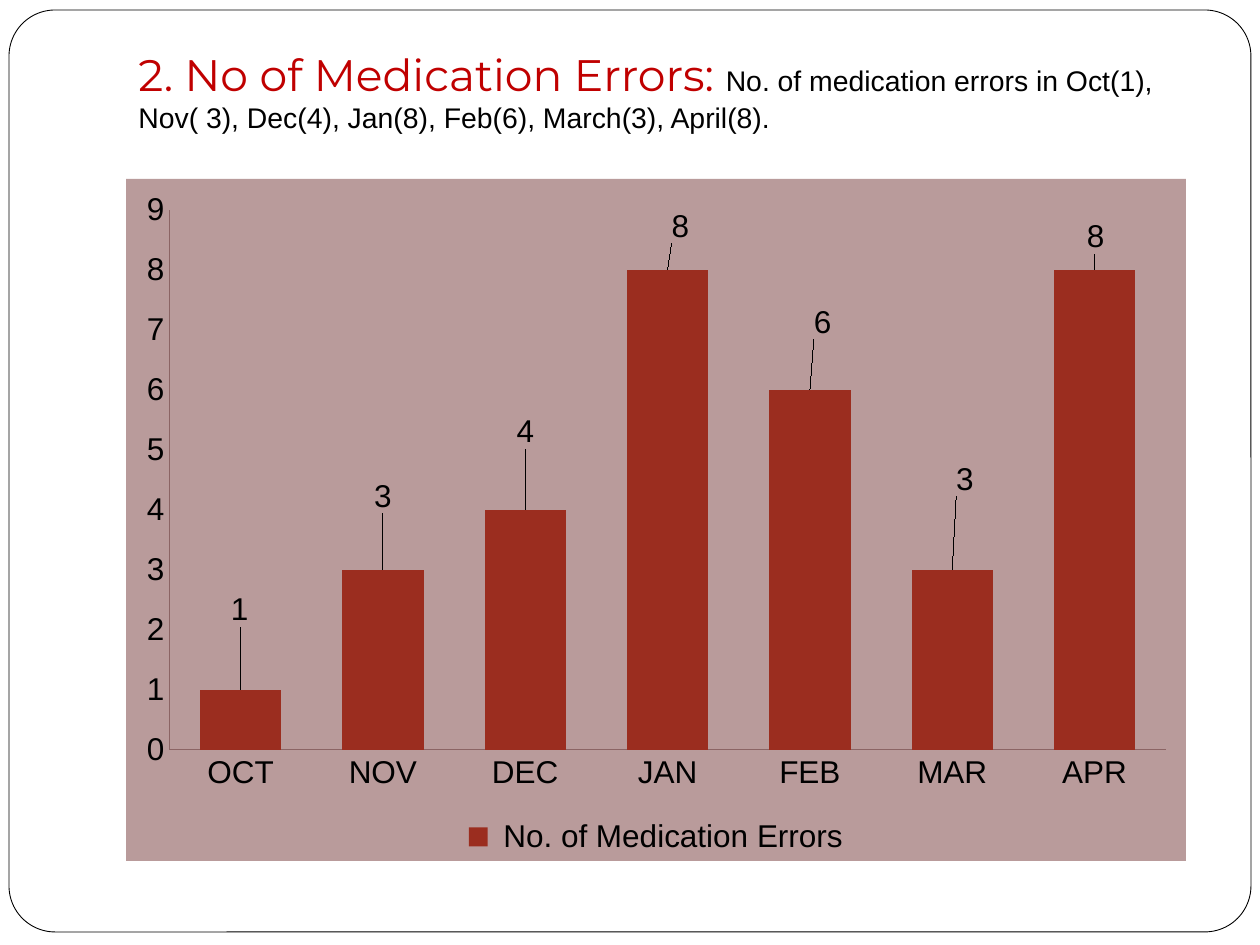
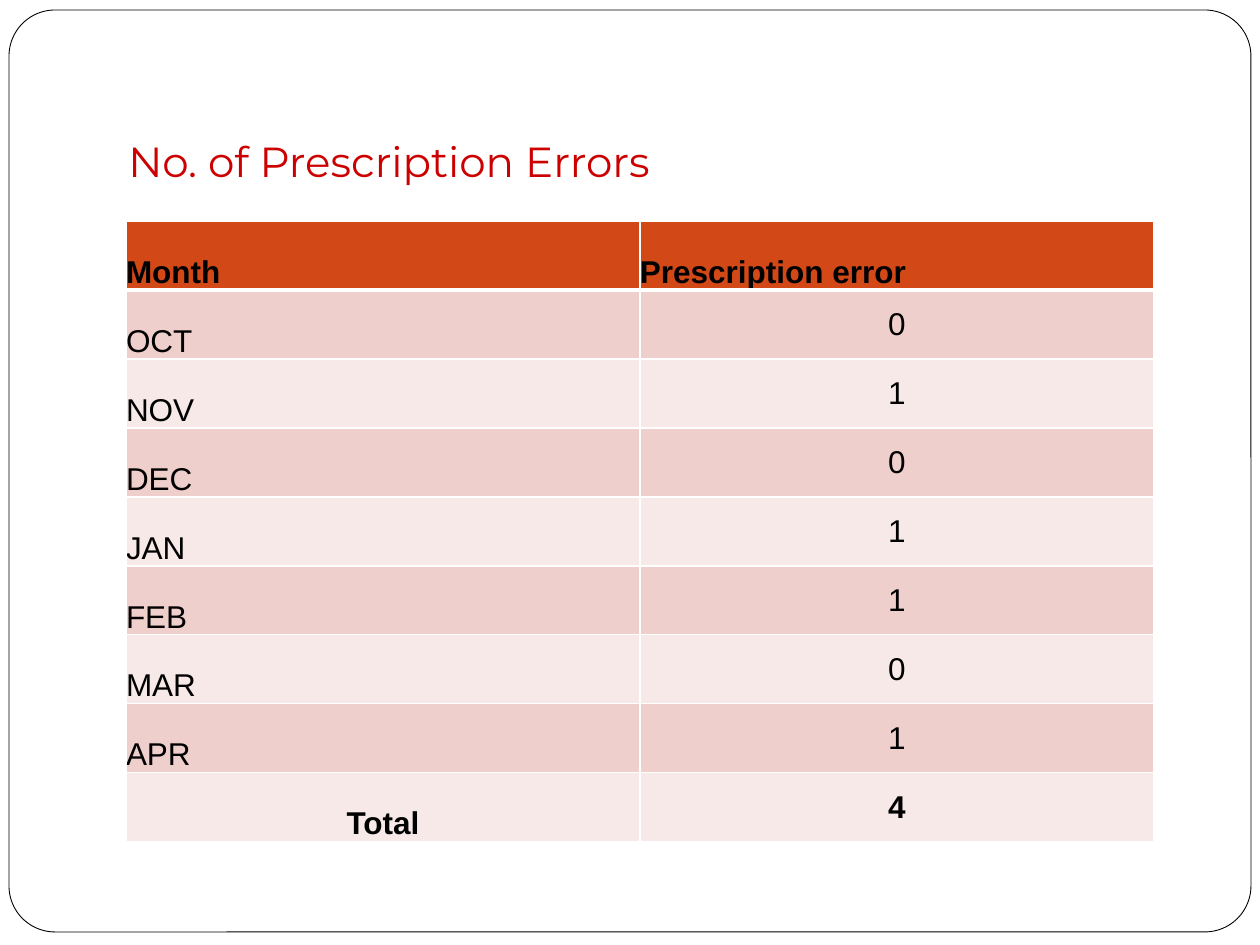
from lxml.etree import Element, SubElement
from pptx import Presentation
from pptx.chart.data import CategoryChartData
from pptx.dml.color import RGBColor
from pptx.enum.chart import XL_CHART_TYPE as ChartType
from pptx.enum.chart import XL_LABEL_POSITION as LabelPosition
from pptx.enum.chart import XL_LEGEND_POSITION as LegendPosition
from pptx.enum.chart import XL_TICK_MARK as TickMark
from pptx.enum.shapes import MSO_SHAPE as Shape
from pptx.enum.text import MSO_ANCHOR as Anchor
from pptx.enum.text import PP_ALIGN as Align
from pptx.oxml.ns import qn
from pptx.util import Emu, Pt

EMU_PER_PX = 914400 / 126
COLORS = {
    "white": "FFFFFF", "black": "000000", "crimson": "C00000", "red": "CC0000",
    "bar": "9B2D1F", "chart": "B99B9B", "axis": "8B6464",
    "header": "D34817", "odd": "EFCFCC", "even": "F7E9E8",
}
BODY_FONT, TITLE_FONT = "Arial", "Montserrat"
MONTHS = ["OCT", "NOV", "DEC", "JAN", "FEB", "MAR", "APR"]
MEDICATION_ERRORS = [1, 3, 4, 8, 6, 3, 8]
PRESCRIPTION_ERRORS = [0, 1, 0, 1, 1, 0, 1]
LABEL_SHIFTS = [(-1, -57), (0, -51), (0, -55), (13, -21), (13, -45), (13, -68), (1, -10)]
CHART_BOX = (126, 179, 1060, 682)
PLOT_BOX = (43, 31, 996, 540)


def px(length):
    """Turn pixels into EMU."""
    return Emu(round(length * EMU_PER_PX))


def color(name):
    """Look up a named colour."""
    return RGBColor.from_string(COLORS[name])


def set_font(font, name, size, tint, bold=False):
    """Set the face, size, colour and weight of a font."""
    font.name, font.size, font.bold = name, Pt(size), bold
    font.color.rgb = color(tint)


def add_solid_fill(parent, tint):
    """Append a solid fill to an XML element."""
    fill = SubElement(parent, qn("a:solidFill"))
    SubElement(fill, qn("a:srgbClr"), val=COLORS[tint])


def add_framed_page(deck):
    """Add a blank slide with the rounded frame."""
    page = deck.slides.add_slide(deck.slide_layouts[6])
    frame = page.shapes.add_shape(Shape.ROUNDED_RECTANGLE, px(9), px(10), px(1242), px(922))
    frame.adjustments[0] = 0.05
    frame.shadow.inherit = False
    frame.fill.solid()
    frame.fill.fore_color.rgb = color("white")
    frame.line.color.rgb = color("black")
    frame.line.width = Pt(0.5)
    return page


def add_title(page, bounds, spans):
    """Add a bottom-anchored title made of (text, font, size, colour) spans."""
    frame = page.shapes.add_textbox(*map(px, bounds)).text_frame
    frame.word_wrap = True
    frame.vertical_anchor = Anchor.BOTTOM
    frame.margin_bottom = px(13)
    para = frame.paragraphs[0]
    for text, *style in spans:
        span = para.add_run()
        span.text = text
        set_font(span.font, *style)


def make_layout(**values):
    """Build a manual chart layout from its settings."""
    layout = Element(qn("c:layout"))
    manual = SubElement(layout, qn("c:manualLayout"))
    for tag, value in values.items():
        SubElement(manual, qn(f"c:{tag}"), val=str(value))
    return layout


def place_plot(chart):
    """Fix the inner plot area within the chart."""
    area = chart._chartSpace.chart.plotArea
    for old in area.findall(qn("c:layout")):
        area.remove(old)
    width, height = CHART_BOX[2:]
    left, top, plot_width, plot_height = PLOT_BOX
    area.insert(0, make_layout(
        layoutTarget="inner", xMode="edge", yMode="edge",
        x=round(left / width, 3), y=round(top / height, 3),
        w=round(plot_width / width, 3), h=round(plot_height / height, 3)))


def fill_chart(chart, tint):
    """Fill the chart background without an outline."""
    properties = Element(qn("c:spPr"))
    add_solid_fill(properties, tint)
    SubElement(SubElement(properties, qn("a:ln")), qn("a:noFill"))
    chart._chartSpace.chart.addnext(properties)


def shift_labels(series):
    """Move each value label away from its bar."""
    width, height = CHART_BOX[2:]
    for index, (right, down) in enumerate(LABEL_SHIFTS):
        label = series.points[index].data_label
        label.position = LabelPosition.OUTSIDE_END
        label._get_or_add_dLbl().insert(
            1, make_layout(x=round(right / width, 3), y=round(down / height, 3)))


def style_axis(axis):
    """Give an axis a thin line without ticks or gridlines."""
    axis.has_major_gridlines = False
    axis.major_tick_mark = axis.minor_tick_mark = TickMark.NONE
    axis.format.line.color.rgb = color("axis")
    axis.format.line.width = Pt(0.75)


def add_column_chart(page, name, values):
    """Add the monthly column chart."""
    chart_data = CategoryChartData()
    chart_data.categories = MONTHS
    chart_data.add_series(name, values)
    chart = page.shapes.add_chart(
        ChartType.COLUMN_CLUSTERED, *map(px, CHART_BOX), chart_data).chart
    set_font(chart.font, BODY_FONT, 18, "black")
    chart.has_title = False
    chart.has_legend = True
    chart.legend.position = LegendPosition.BOTTOM
    chart.legend.include_in_layout = False
    for axis in (chart.category_axis, chart.value_axis):
        style_axis(axis)
    chart.value_axis.minimum_scale, chart.value_axis.maximum_scale = 0, 9
    chart.value_axis.major_unit = 1
    plot = chart.plots[0]
    plot.gap_width = 75
    plot.vary_by_categories = False
    series = plot.series[0]
    series.format.fill.solid()
    series.format.fill.fore_color.rgb = color("bar")
    series.data_labels.show_value = True
    shift_labels(series)
    place_plot(chart)
    fill_chart(chart, "chart")


def style_cell(cell, fill, anchor, align, bold, top, bottom):
    """Set the borders, fill, margins and text of a cell."""
    properties = cell._tc.get_or_add_tcPr()
    for side, width in zip("LRTB", (1, 1, top, bottom)):
        line = SubElement(properties, qn(f"a:ln{side}"), w=str(Pt(width)))
        add_solid_fill(line, "white")
    cell.fill.solid()
    cell.fill.fore_color.rgb = color(fill)
    cell.margin_left = cell.margin_right = cell.margin_top = cell.margin_bottom = 0
    cell.vertical_anchor = anchor
    para = cell.text_frame.paragraphs[0]
    para.alignment = align
    set_font(para.font, BODY_FONT, 18, "black", bold)


def add_error_table(page, rows):
    """Add a banded table with a header row and a total row."""
    last = len(rows) - 1
    table = page.shapes.add_table(
        len(rows), 2, px(126), px(221), px(1028), px(69 * len(rows))).table
    for row, texts in enumerate(rows):
        fill = "header" if row == 0 else "odd" if row % 2 else "even"
        for column, text in enumerate(texts):
            cell = table.cell(row, column)
            cell.text = str(text)
            is_value = column == 1 and row > 0
            style_cell(
                cell, fill, Anchor.MIDDLE if is_value else Anchor.BOTTOM,
                Align.CENTER if is_value or row == last else Align.LEFT,
                bold=row in (0, last), top=3 if row == 1 else 1, bottom=3 if row == 0 else 1)


def main():
    """Build and save the deck."""
    deck = Presentation()
    deck.slide_width, deck.slide_height = px(1260), px(945)

    page = add_framed_page(deck)
    add_title(page, (126, 38, 1071, 109), [
        ("2. No of Medication Errors: ", TITLE_FONT, 25.2, "crimson"),
        ("No. of medication errors in Oct(1), Nov( 3), Dec(4), Jan(8), Feb(6), "
         "March(3), April(8).", BODY_FONT, 16.2, "black")])
    add_column_chart(page, " No. of Medication Errors", MEDICATION_ERRORS)

    page = add_framed_page(deck)
    add_title(page, (116, 42, 1071, 157), [
        ("No. of Prescription Errors", TITLE_FONT, 24, "red")])
    add_error_table(page, [
        ("Month", "Prescription error"),
        *zip(MONTHS, PRESCRIPTION_ERRORS),
        ("Total", sum(PRESCRIPTION_ERRORS))])

    deck.save("out.pptx")


if __name__ == "__main__":
    main()
